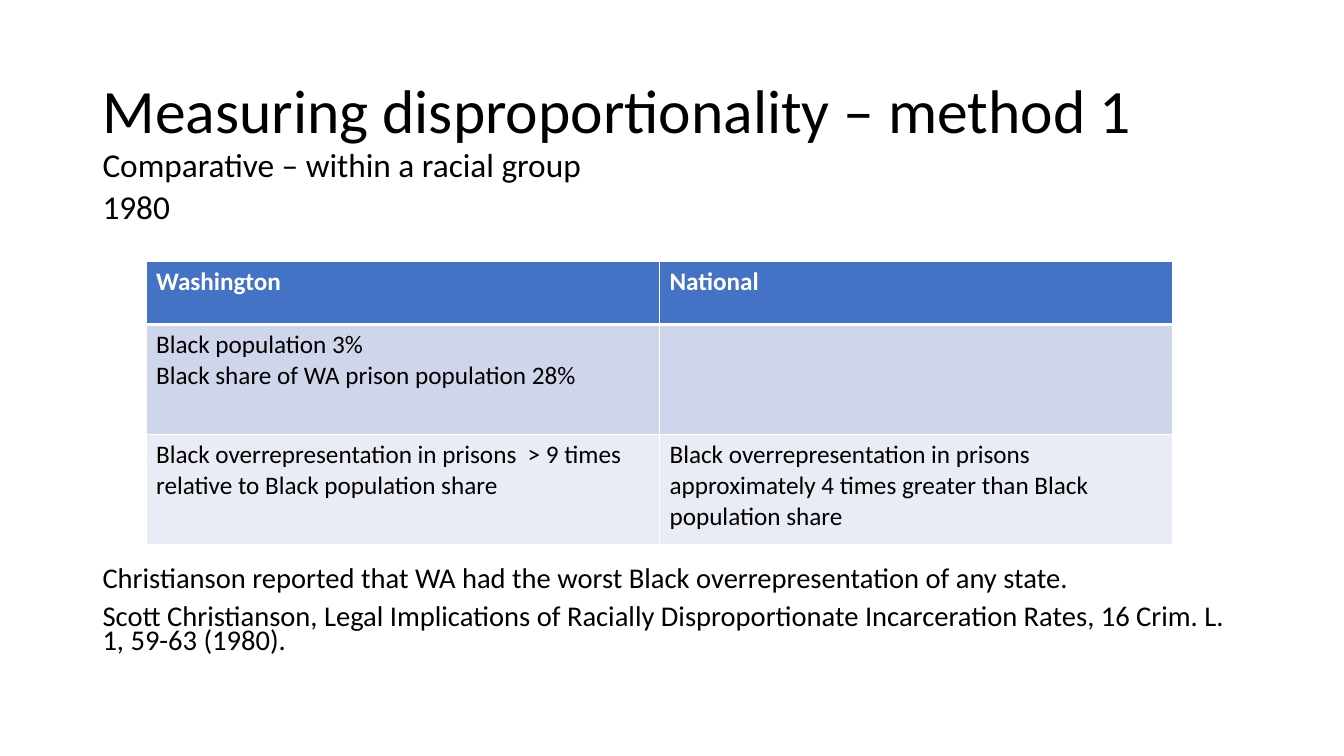
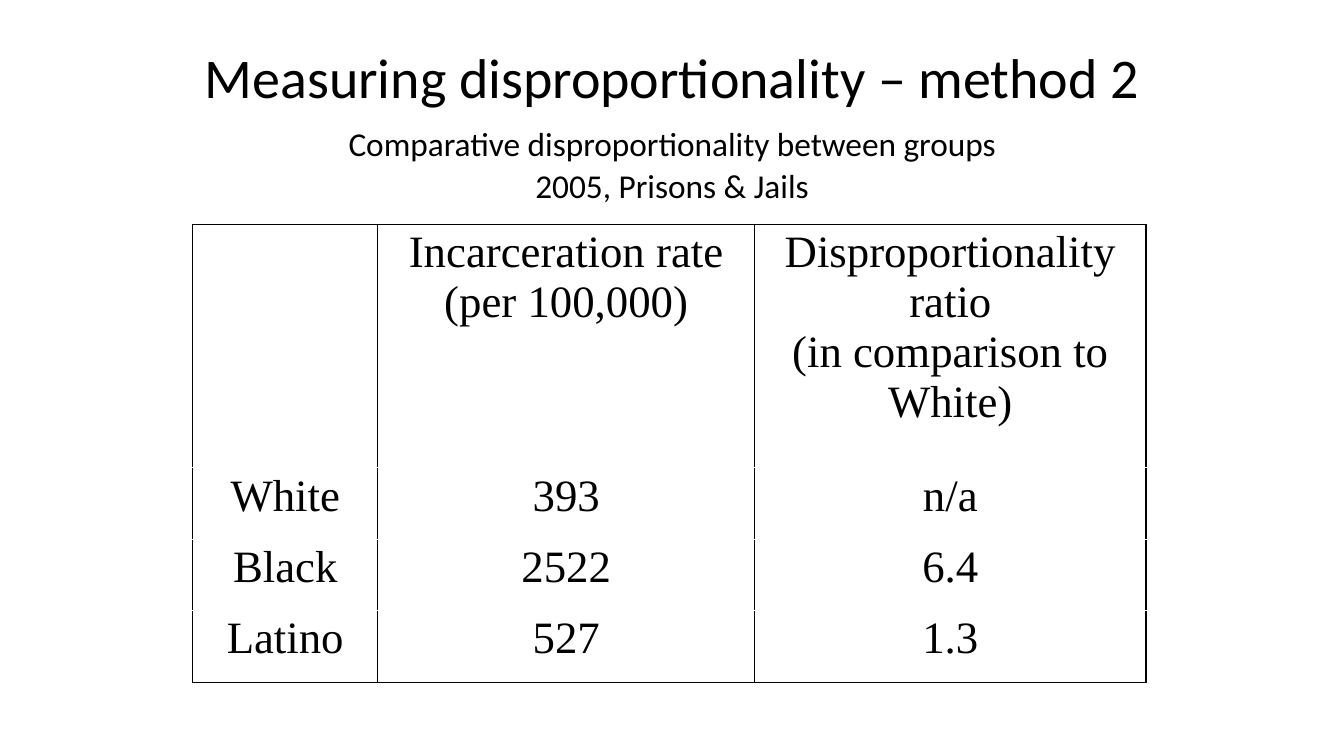
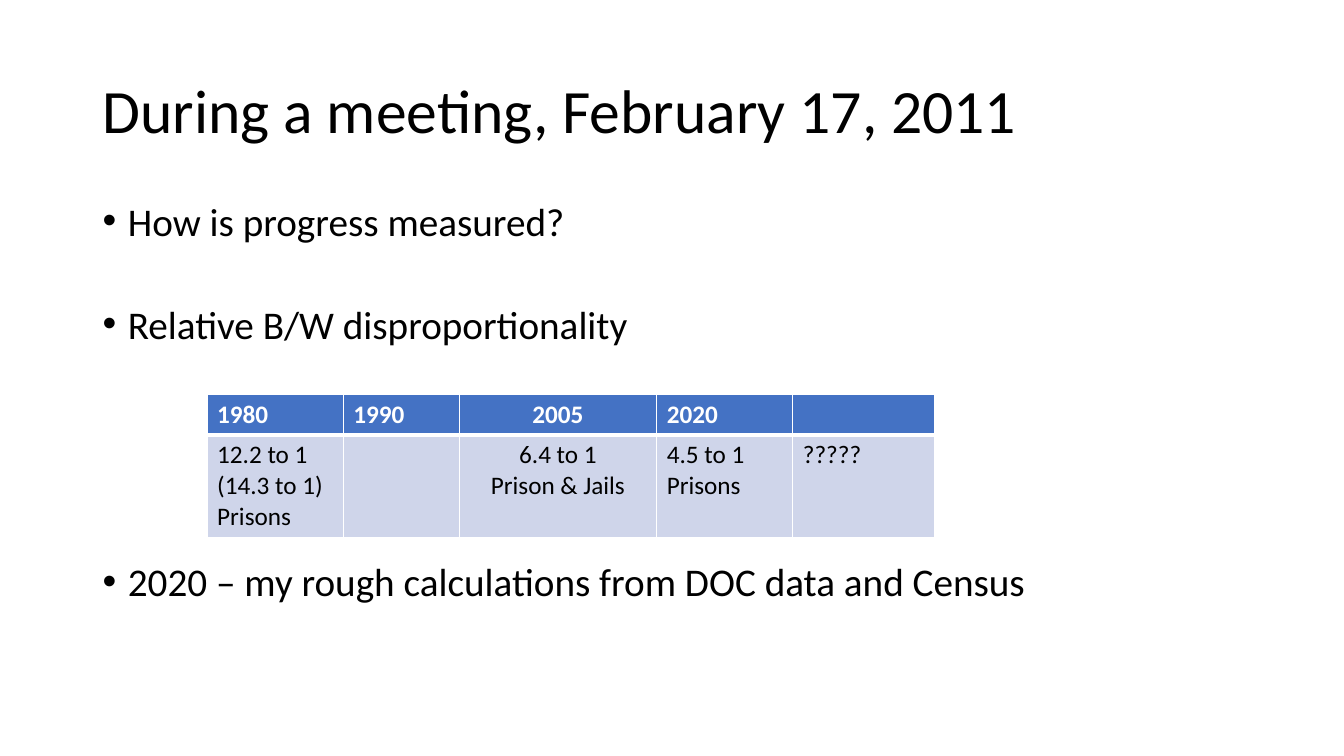
from lxml import etree
from pptx import Presentation
from pptx.dml.color import RGBColor
from pptx.enum.text import MSO_ANCHOR as Anchor, MSO_AUTO_SIZE as AutoSize, PP_ALIGN as Align
from pptx.oxml.ns import qn
from pptx.util import Cm, Pt

COLOURS = {
    "text": "000000",
    "white": "FFFFFF",
    "header": "4472C4",
    "band_dark": "CFD5EA",
    "band_light": "E9EBF5",
}
SANS, SERIF = "Calibri", "Times New Roman"
LEFT, WIDTH = 2.33, 29.21


class Deck:
    def __init__(self):
        self.presentation = Presentation()
        self.presentation.slide_width = Cm(33.87)
        self.presentation.slide_height = Cm(19.05)
        self.slide = None

    def add_slide(self):
        layout = self.presentation.slide_layouts[1]
        self.slide = self.presentation.slides.add_slide(layout)

    def place(self, shape, box, anchor):
        shape.left, shape.top, shape.width, shape.height = map(Cm, box)
        frame = shape.text_frame
        frame.word_wrap = True
        frame.auto_size = AutoSize.NONE
        frame.vertical_anchor = anchor
        return frame

    def add_text(self, paragraph, text, size, align=Align.LEFT, colour="text", font=SANS,
                 bold=False):
        paragraph.alignment = align
        run = paragraph.add_run()
        run.text = text
        run.font.name = font
        run.font.size = Pt(size)
        run.font.bold = bold
        run.font.color.rgb = RGBColor.from_string(COLOURS[colour])

    def title(self, text, box=(LEFT, 1.01, WIDTH, 3.68), size=44, align=Align.LEFT):
        frame = self.place(self.slide.shapes.title, box, Anchor.MIDDLE)
        frame.paragraphs[0].line_spacing = 0.9
        self.add_text(frame.paragraphs[0], text, size, align)

    def body(self, lines, box, line_spacing=0.7, align=Align.LEFT, bullets=False):
        """Fill the body placeholder with lines of (text, size, space before)."""
        frame = self.place(self.slide.placeholders[1], box, Anchor.TOP)
        for index, (text, size, gap) in enumerate(lines):
            paragraph = frame.add_paragraph() if index else frame.paragraphs[0]
            paragraph.line_spacing = line_spacing
            paragraph.space_before = Pt(gap)
            self.add_text(paragraph, text, size, align)
            properties = paragraph._p.get_or_add_pPr()
            indent = Cm(0.64) if bullets else 0
            properties.set("marL", str(indent))
            properties.set("indent", str(-indent))
            if bullets:
                etree.SubElement(properties, qn("a:buChar")).set("char", "•")
            else:
                etree.SubElement(properties, qn("a:buNone"))

    def borders(self, cell, colour, widths):
        """Draw cell edges; widths maps L, R, T or B to points."""
        properties = cell._tc.get_or_add_tcPr()
        for side, width in widths.items():
            line = etree.SubElement(properties, qn(f"a:ln{side}"), w=str(Pt(width)))
            fill = etree.SubElement(line, qn("a:solidFill"))
            etree.SubElement(fill, qn("a:srgbClr")).set("val", COLOURS[colour])

    def table(self, rows, left, top, widths, heights, centred=(), plain=False):
        """Add a banded table, or a black ruled one when plain."""
        frame = self.slide.shapes.add_table(
            len(rows), len(widths), Cm(left), Cm(top), Cm(sum(widths)), Cm(sum(heights)))
        table = frame.table
        table.horz_banding = False
        for column, width in zip(table.columns, widths):
            column.width = Cm(width)
        for row, height in zip(table.rows, heights):
            row.height = Cm(height)
        for r, texts in enumerate(rows):
            header = r == 0 and not plain
            for c, text in enumerate(texts):
                cell = table.cell(r, c)
                edges = {"L": 1, "R": 1}
                if r == 0:
                    edges["T"] = 1
                edges["B"] = 3 if header else 1
                self.borders(cell, "text" if plain else "white", edges)
                if plain:
                    cell.fill.background()
                    cell.margin_left = cell.margin_right = Cm(0.5)
                    cell.margin_top, cell.margin_bottom = Cm(0.08), 0
                else:
                    band = "header" if header else ("band_light", "band_dark")[r % 2]
                    cell.fill.solid()
                    cell.fill.fore_color.rgb = RGBColor.from_string(COLOURS[band])
                if not text:
                    continue
                for index, line in enumerate(text.split("\n")):
                    text_frame = cell.text_frame
                    paragraph = text_frame.add_paragraph() if index else text_frame.paragraphs[0]
                    self.add_text(paragraph, line, 32 if plain else 18,
                                  Align.CENTER if c in centred else Align.LEFT,
                                  "white" if header else "text",
                                  SERIF if plain else SANS, header)


def method_one(deck):
    deck.add_slide()
    deck.title("Measuring disproportionality – method 1")
    deck.body([
        ("Comparative – within a racial group", 23.8, 10),
        ("1980", 23.8, 10),
        ("Christianson reported that WA had the worst Black overrepresentation of any state.",
         20.4, 246),
        ("Scott Christianson, Legal Implications of Racially Disproportionate Incarceration "
         "Rates, 16 Crim. L. 1, 59-63 (1980).", 20.4, 10),
    ], (LEFT, 3.78, WIDTH, 13.39))
    deck.table([
        ("Washington", "National"),
        ("Black population 3%\nBlack share of WA prison population 28%", ""),
        ("Black overrepresentation in prisons  > 9 times relative to Black population share",
         "Black overrepresentation in prisons approximately 4 times greater than Black "
         "population share"),
    ], 3.68, 6.58, [12.94] * 2, [1.6, 2.77, 2.77])


def method_two(deck):
    deck.add_slide()
    deck.title("Measuring disproportionality – method 2", (2.8, 0.48, 28.27, 3.1), 40, Align.CENTER)
    deck.body([
        ("Comparative disproportionality between groups", 23.8, 10),
        ("2005, Prisons & Jails", 23.8, 10),
    ], (2.8, 3.25, 28.27, 2.4), align=Align.CENTER)
    deck.table([
        ("", "Incarceration rate\n(per 100,000)",
         "Disproportionality ratio\n(in comparison to White)"),
        ("White", "393", "n/a"),
        ("Black", "2522", "6.4"),
        ("Latino", "527", "1.3"),
    ], 4.86, 5.66, [4.66, 9.5, 9.86], [6.13] + [1.8] * 3, centred=range(3), plain=True)


def meeting(deck):
    deck.add_slide()
    deck.title("During a meeting, February 17, 2011")
    deck.body([
        ("How is progress measured?", 28, 10),
        ("Relative B/W disproportionality", 28, 46.5),
        ("2020 – my rough calculations from DOC data and Census", 28, 157),
    ], (LEFT, 5.07, WIDTH, 12.09), line_spacing=0.8, bullets=True)
    deck.table([
        ("1980", "1990", "2005", "2020", ""),
        ("12.2 to 1\n(14.3 to 1)\nPrisons", "", "6.4 to 1\nPrison & Jails",
         "4.5 to 1\nPrisons", "?????"),
    ], 5.22, 9.93, [3.43, 2.92, 4.98, 3.43, 3.58], [1.03, 2.55], centred=[2])


def main():
    deck = Deck()
    for build in (method_one, method_two, meeting):
        build(deck)
    deck.presentation.save("out.pptx")


if __name__ == "__main__":
    main()
